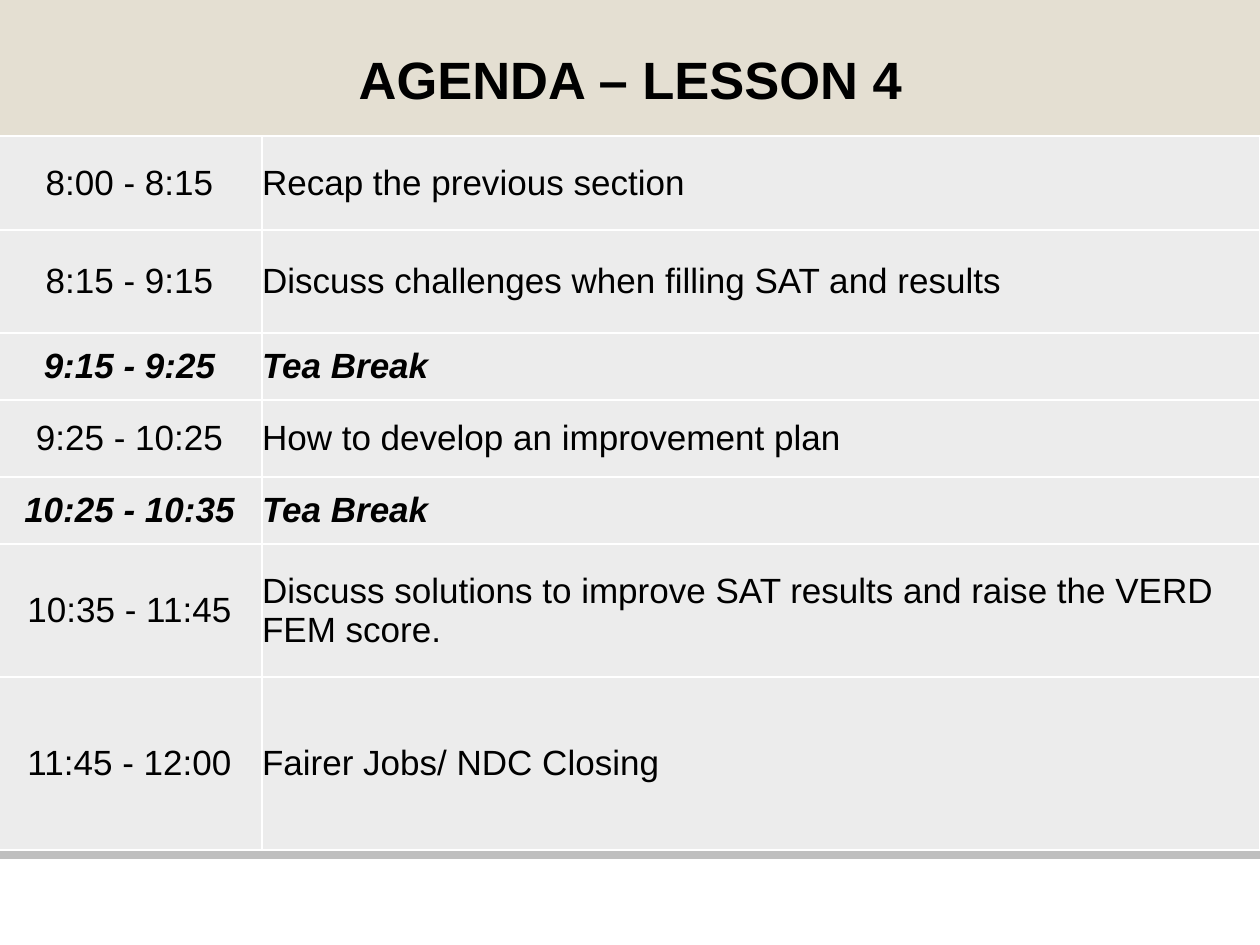
from lxml import etree
from pptx import Presentation
from pptx.dml.color import RGBColor
from pptx.enum.shapes import MSO_SHAPE
from pptx.enum.text import MSO_ANCHOR, MSO_AUTO_SIZE, PP_ALIGN
from pptx.oxml.ns import qn
from pptx.util import Emu, Pt

RECTANGLE = MSO_SHAPE.RECTANGLE
TOP, MIDDLE = MSO_ANCHOR.TOP, MSO_ANCHOR.MIDDLE
LEFT, CENTER = PP_ALIGN.LEFT, PP_ALIGN.CENTER
NO_AUTOFIT = MSO_AUTO_SIZE.NONE

EMU_PER_PX = 914400 / 126
FONT = "Arial"
BLACK, WHITE = "000000", "FFFFFF"
BAND, RULE, CELL = "E4DFD2", "BFBFBF", "ECECEC"

COLUMN_WIDTHS = (265, 998)
# Time, activity, row height, is a break
AGENDA = (
    ("8:00 - 8:15", "Recap the previous section", 94, False),
    ("8:15 - 9:15", "Discuss challenges when filling SAT and results", 103, False),
    ("9:15 - 9:25", "Tea Break", 67, True),
    ("9:25 - 10:25", "How to develop an improvement plan", 77, False),
    ("10:25 - 10:35", "Tea Break", 67, True),
    ("10:35 - 11:45",
     "Discuss solutions to improve SAT results and raise the VERD FEM score.", 133, False),
    ("11:45 - 12:00", "Fairer Jobs/ NDC Closing", 173, False),
)


def px(length):
    return Emu(round(length * EMU_PER_PX))


def colour(value):
    return RGBColor.from_string(value)


def style_font(font, size, bold=False, italic=False):
    font.name = FONT
    font.size = Pt(size)
    font.bold = bold
    font.italic = italic
    font.color.rgb = colour(BLACK)


def add_bar(page, left, top, width, height, fill, line_width=0):
    bar = page.shapes.add_shape(RECTANGLE, px(left), px(top), px(width), px(height))
    bar.shadow.inherit = False
    bar.fill.solid()
    bar.fill.fore_color.rgb = colour(fill)
    if line_width:
        bar.line.color.rgb = colour(fill)
        bar.line.width = Pt(line_width)
    else:
        bar.line.fill.background()
    return bar


def set_title(page, text):
    title = page.shapes.title
    title.left, title.top, title.width, title.height = px(48), px(53), px(1165), px(58)
    frame = title.text_frame
    frame.text = text
    frame.auto_size = NO_AUTOFIT
    frame.vertical_anchor = TOP
    frame.margin_left = frame.margin_top = frame.margin_right = frame.margin_bottom = 0
    paragraph = frame.paragraphs[0]
    paragraph.alignment = CENTER
    paragraph.line_spacing = Pt(32.7)
    style_font(paragraph.runs[0].font, 30, bold=True)
    return title


def set_borders(cell, value, width):
    properties = cell._tc.get_or_add_tcPr()
    for index, side in enumerate(("lnL", "lnR", "lnT", "lnB")):
        line = etree.Element(qn("a:" + side), w=str(Pt(width)))
        fill = etree.SubElement(line, qn("a:solidFill"))
        etree.SubElement(fill, qn("a:srgbClr"), val=value)
        properties.insert(index, line)


def fill_cell(cell, text, alignment, is_break):
    cell.text_frame.text = text
    cell.vertical_anchor = MIDDLE
    cell.margin_left = cell.margin_top = cell.margin_right = cell.margin_bottom = 0
    cell.fill.solid()
    cell.fill.fore_color.rgb = colour(CELL)
    set_borders(cell, WHITE, 1)
    paragraph = cell.text_frame.paragraphs[0]
    paragraph.alignment = alignment
    style_font(paragraph.runs[0].font, 20, bold=is_break, italic=is_break)


def add_agenda(page, left, top):
    heights = [row[2] for row in AGENDA]
    table = page.shapes.add_table(
        len(AGENDA), len(COLUMN_WIDTHS), px(left), px(top),
        px(sum(COLUMN_WIDTHS)), px(sum(heights))).table
    table.first_row = table.horz_banding = False
    for column, width in zip(table.columns, COLUMN_WIDTHS):
        column.width = px(width)
    for index, (time, activity, height, is_break) in enumerate(AGENDA):
        table.rows[index].height = px(height)
        fill_cell(table.cell(index, 0), time, CENTER, is_break)
        fill_cell(table.cell(index, 1), activity, LEFT, is_break)


def main():
    deck = Presentation()
    deck.slide_width, deck.slide_height = px(1260), px(945)
    page = deck.slides.add_slide(deck.slide_layouts[5])

    # Title on its band, with the bars kept behind the title
    title = set_title(page, "AGENDA – LESSON 4")
    footer_rule = add_bar(page, 0, 851, 1260, 6, RULE, line_width=2)
    title_band = add_bar(page, 0, 0, 1260, 136, BAND)
    for bar in (footer_rule, title_band):
        title._element.addprevious(bar._element)

    # Timetable
    add_agenda(page, -3, 136)
    deck.save("out.pptx")


if __name__ == "__main__":
    main()
